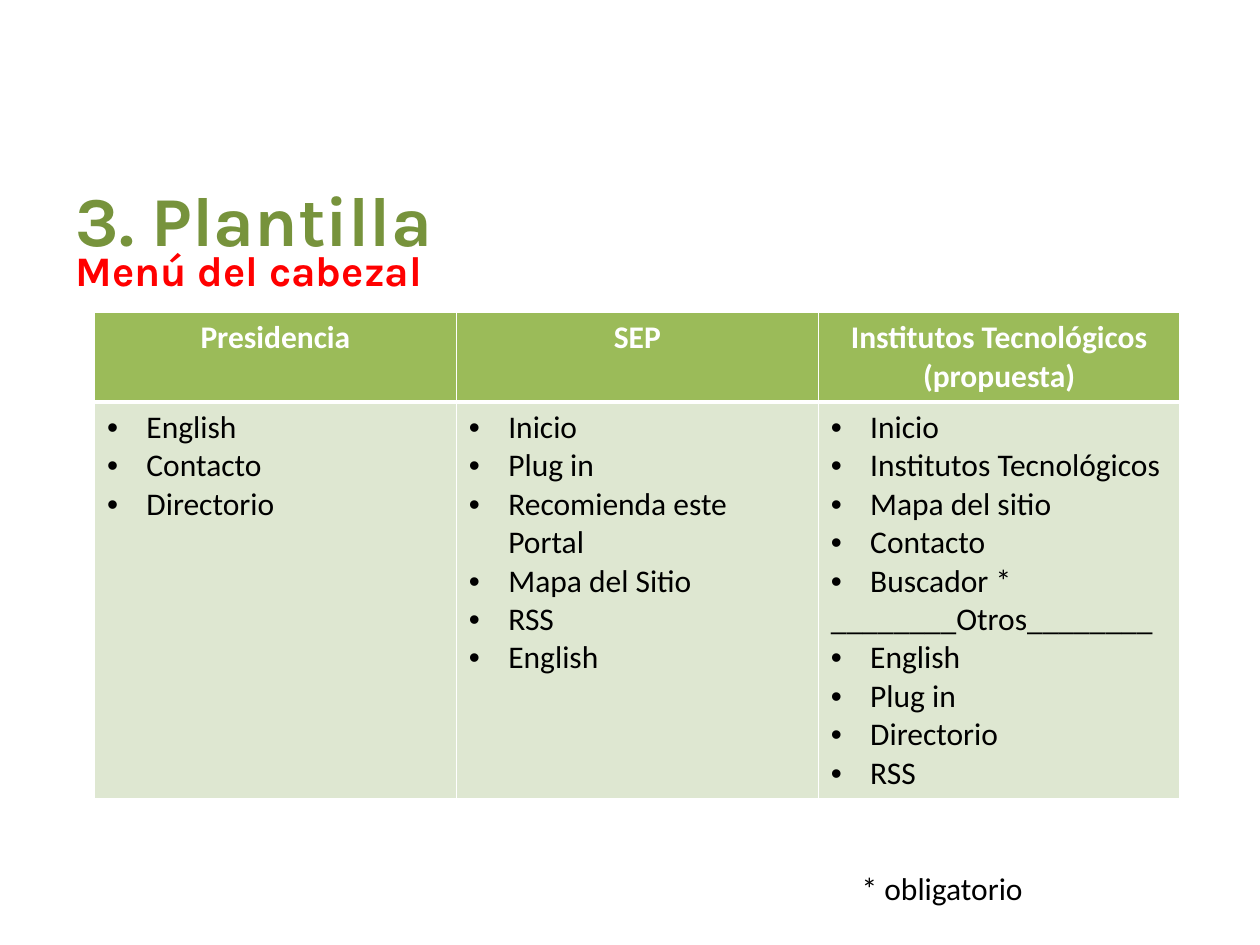
from dataclasses import dataclass

from lxml import etree
from pptx import Presentation
from pptx.dml.color import RGBColor
from pptx.enum.text import MSO_ANCHOR, MSO_AUTO_SIZE, PP_ALIGN
from pptx.oxml.ns import qn
from pptx.util import Pt

LEFT, CENTER, JUSTIFY = PP_ALIGN.LEFT, PP_ALIGN.CENTER, PP_ALIGN.JUSTIFY
TOP, MIDDLE = MSO_ANCHOR.TOP, MSO_ANCHOR.MIDDLE

GREEN = RGBColor(0x9B, 0xBB, 0x59)
PALE_GREEN = RGBColor(0xDE, 0xE7, 0xD1)
DARK_GREEN = RGBColor(0x77, 0x93, 0x3C)
RED = RGBColor(0xFF, 0x00, 0x00)
WHITE = RGBColor(0xFF, 0xFF, 0xFF)
BLACK = RGBColor(0x00, 0x00, 0x00)

DIVIDER = "________Otros________"
INDENT = Pt(22.5)


@dataclass
class Menu:
    heading: str
    items: list[str]


MENUS = [
    Menu("Presidencia", ["English", "Contacto", "Directorio"]),
    Menu("SEP", ["Inicio", "Plug in", "Recomienda este Portal",
                 "Mapa del Sitio", "RSS", "English"]),
    Menu("Institutos Tecnológicos\v(propuesta)",
         ["Inicio", "Institutos Tecnológicos", "Mapa del sitio", "Contacto",
          "Buscador *", DIVIDER, "English", "Plug in", "Directorio", "RSS"]),
]


def write(p, text: str, *, size: float = 18, font: str = "Calibri",
          color: RGBColor = BLACK, bold: bool = False, align=LEFT) -> None:
    """Fill a paragraph with formatted text."""
    p.text = text
    p.alignment = align
    p.space_before = Pt(0)
    for r in p.runs:
        r.font.size = Pt(size)
        r.font.name = font
        r.font.bold = bold
        r.font.color.rgb = color


def set_bullet(p, char: str = "") -> None:
    """Give a paragraph a hanging bullet, or none at all."""
    pPr = p._p.get_or_add_pPr()
    pPr.set("marL", str(INDENT if char else 0))
    pPr.set("indent", str(-INDENT if char else 0))
    if char:
        etree.SubElement(pPr, qn("a:buFont"), typeface="Arial")
        etree.SubElement(pPr, qn("a:buChar"), char=char)
    else:
        etree.SubElement(pPr, qn("a:buNone"))


def style_cell(cell, fill: RGBColor, top: float, bottom: float) -> None:
    """Set white borders and a solid fill."""
    tcPr = cell._tc.get_or_add_tcPr()
    for tag, width in (("lnL", 1), ("lnR", 1), ("lnT", top), ("lnB", bottom)):
        ln = etree.SubElement(tcPr, qn(f"a:{tag}"), w=str(Pt(width)))
        solid = etree.SubElement(ln, qn("a:solidFill"))
        etree.SubElement(solid, qn("a:srgbClr"), val=str(WHITE))
    cell.fill.solid()
    cell.fill.fore_color.rgb = fill


def place(sp, left: float, top: float, width: float, height: float, anchor=TOP):
    """Move a text shape and return its text frame."""
    sp.left, sp.top, sp.width, sp.height = map(Pt, (left, top, width, height))
    tf = sp.text_frame
    tf.word_wrap = True
    tf.auto_size = MSO_AUTO_SIZE.NONE
    tf.vertical_anchor = anchor
    return tf


def add_menu_table(s, menus: list[Menu]) -> None:
    table = s.shapes.add_table(2, len(menus), Pt(54), Pt(178.5),
                               Pt(620.4), Pt(273.6)).table
    table.horz_banding = False
    table.rows[0].height, table.rows[1].height = Pt(50.4), Pt(223.2)
    for col, menu in enumerate(menus):
        head, body = table.cell(0, col), table.cell(1, col)
        style_cell(head, GREEN, top=1, bottom=3)
        style_cell(body, PALE_GREEN, top=3, bottom=1)
        write(head.text_frame.paragraphs[0], menu.heading,
              color=WHITE, bold=True, align=CENTER)
        tf = body.text_frame
        for i, item in enumerate(menu.items):
            p = tf.add_paragraph() if i else tf.paragraphs[0]
            set_bullet(p, "" if item == DIVIDER else "•")
            write(p, item)


def main() -> None:
    prs = Presentation()
    prs.slide_width, prs.slide_height = Pt(720), Pt(540)
    s = prs.slides.add_slide(prs.slide_layouts[1])

    # Title and subtitle
    tf = place(s.shapes.title, 36, 93.6, 648, 62.6, MIDDLE)
    write(tf.paragraphs[0], "3. Plantilla", size=40, font="Karla",
          color=DARK_GREEN, bold=True)
    tf = place(s.placeholders[1], 36, 136, 648, 381.6)
    set_bullet(tf.paragraphs[0])
    write(tf.paragraphs[0], "Menú del cabezal", size=24, font="Karla",
          color=RED, bold=True, align=JUSTIFY)

    # Menu comparison
    add_menu_table(s, MENUS)

    # Footnote
    note = s.shapes.add_textbox(0, 0, 0, 0)
    tf = place(note, 485.3, 493.2, 180, 28.8)
    write(tf.paragraphs[0], "* obligatorio")

    prs.save("out.pptx")


if __name__ == "__main__":
    main()
